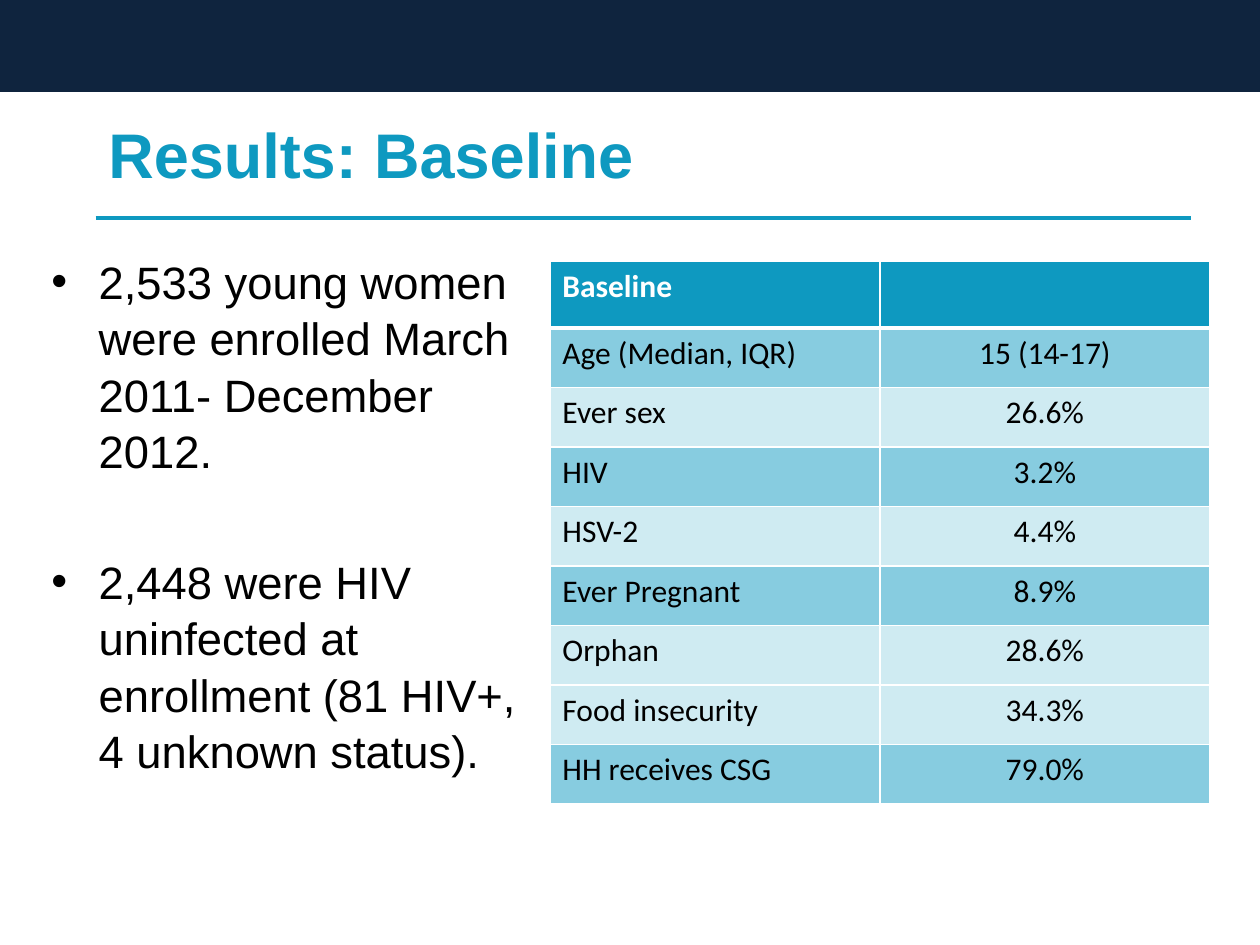
from dataclasses import dataclass

from lxml import etree
from pptx import Presentation
from pptx.dml.color import RGBColor
from pptx.enum.shapes import MSO_CONNECTOR, MSO_SHAPE
from pptx.enum.text import MSO_ANCHOR, PP_ALIGN
from pptx.oxml.ns import qn
from pptx.util import Pt

RECTANGLE = MSO_SHAPE.RECTANGLE
STRAIGHT = MSO_CONNECTOR.STRAIGHT
MIDDLE = MSO_ANCHOR.MIDDLE
LEFT, CENTER = PP_ALIGN.LEFT, PP_ALIGN.CENTER


@dataclass(frozen=True)
class Theme:
    navy: str = "0F243E"
    accent: str = "0E99C0"
    dark_band: str = "87CCE0"
    light_band: str = "CFEBF2"
    white: str = "FFFFFF"
    black: str = "000000"
    heading_font: str = "Arial"
    table_font: str = "Calibri"
    title_size: float = 36
    body_size: float = 25.9
    table_size: float = 18


THEME = Theme()

FINDINGS = [
    "2,533 young women were enrolled March 2011- December 2012.",
    "2,448 were HIV uninfected at enrollment (81 HIV+, 4 unknown status).",
]

# Label, value, row colour
BASELINE = [
    ("Age (Median, IQR)", "15 (14-17)", THEME.dark_band),
    ("Ever sex", "26.6%", THEME.light_band),
    ("HIV", "3.2%", THEME.dark_band),
    ("HSV-2", "4.4%", THEME.light_band),
    ("Ever Pregnant", "8.9%", THEME.dark_band),
    ("Orphan", "28.6%", THEME.light_band),
    ("Food insecurity", "34.3%", THEME.light_band),
    ("HH receives CSG", "79.0%", THEME.dark_band),
]


def rgb(color):
    return RGBColor.from_string(color)


def box(*lengths):
    return [Pt(length) for length in lengths]


def style_font(paragraph, name, size, color, bold=False):
    font = paragraph.font
    font.name, font.size, font.bold = name, Pt(size), bold
    font.color.rgb = rgb(color)


def add_banner(slide):
    banner = slide.shapes.add_shape(RECTANGLE, *box(0, 0, 720, 52.5))
    banner.shadow.inherit = False
    banner.fill.solid()
    banner.fill.fore_color.rgb = rgb(THEME.navy)
    banner.line.fill.background()


def set_title(slide, text):
    title = slide.shapes.title
    title.left, title.top, title.width, title.height = box(54.7, 50.4, 588, 74)
    title.text_frame.text = text
    title.text_frame.vertical_anchor = MIDDLE
    heading = title.text_frame.paragraphs[0]
    heading.alignment = LEFT
    style_font(heading, THEME.heading_font, THEME.title_size, THEME.accent, True)


def add_rule(slide):
    rule = slide.shapes.add_connector(STRAIGHT, *box(54.7, 124.5, 680.4, 124.5))
    rule.line.color.rgb = rgb(THEME.accent)
    rule.line.width = Pt(2)
    etree.SubElement(rule.element.spPr, qn("a:effectLst"))


def add_bullet(paragraph):
    properties = paragraph._p.get_or_add_pPr()
    properties.set("marL", str(Pt(27)))
    properties.set("indent", str(-Pt(27)))
    etree.SubElement(properties, qn("a:buFont"), typeface=THEME.heading_font)
    etree.SubElement(properties, qn("a:buChar"), char="•")


def add_findings(slide, findings):
    frame = slide.shapes.add_textbox(*box(22.3, 140.4, 281, 274)).text_frame
    frame.word_wrap = True
    frame.margin_right = Pt(4)
    for index, finding in enumerate(findings):
        paragraph = frame.add_paragraph() if index else frame.paragraphs[0]
        paragraph.text = finding
        paragraph.line_spacing = 1.04
        paragraph.space_before = Pt(42 if index else 2)
        style_font(paragraph, THEME.heading_font, THEME.body_size, THEME.black)
        add_bullet(paragraph)


def set_borders(cell, top, bottom):
    properties = cell._tc.get_or_add_tcPr()
    for side, width in (("L", 1), ("R", 1), ("T", top), ("B", bottom)):
        border = etree.SubElement(properties, qn(f"a:ln{side}"), w=str(Pt(width)))
        fill = etree.SubElement(border, qn("a:solidFill"))
        etree.SubElement(fill, qn("a:srgbClr"), val=THEME.white)


def add_baseline_table(slide, records):
    rows = [("Baseline", "", THEME.accent), *records]
    table = slide.shapes.add_table(len(rows), 2, *box(314.2, 149.4, 377.2, 310)).table
    for column in table.columns:
        column.width = Pt(188.6)
    for index, (label, value, color) in enumerate(rows):
        header = index == 0
        table.rows[index].height = Pt(38 if header else 34)
        for column, text in enumerate((label, value)):
            cell = table.cell(index, column)
            set_borders(cell, 3 if index == 1 else 1, 3 if header else 1)
            cell.fill.solid()
            cell.fill.fore_color.rgb = rgb(color)
            cell.text = text
            paragraph = cell.text_frame.paragraphs[0]
            paragraph.alignment = CENTER if column else LEFT
            style_font(paragraph, THEME.table_font, THEME.table_size,
                       THEME.white if header else THEME.black, header)


def main():
    presentation = Presentation()
    presentation.slide_width, presentation.slide_height = box(720, 540)
    slide = presentation.slides.add_slide(presentation.slide_layouts[5])

    # Heading
    add_banner(slide)
    set_title(slide, "Results: Baseline")
    add_rule(slide)

    # Findings beside the baseline figures
    add_findings(slide, FINDINGS)
    add_baseline_table(slide, BASELINE)

    presentation.save("out.pptx")


if __name__ == "__main__":
    main()
